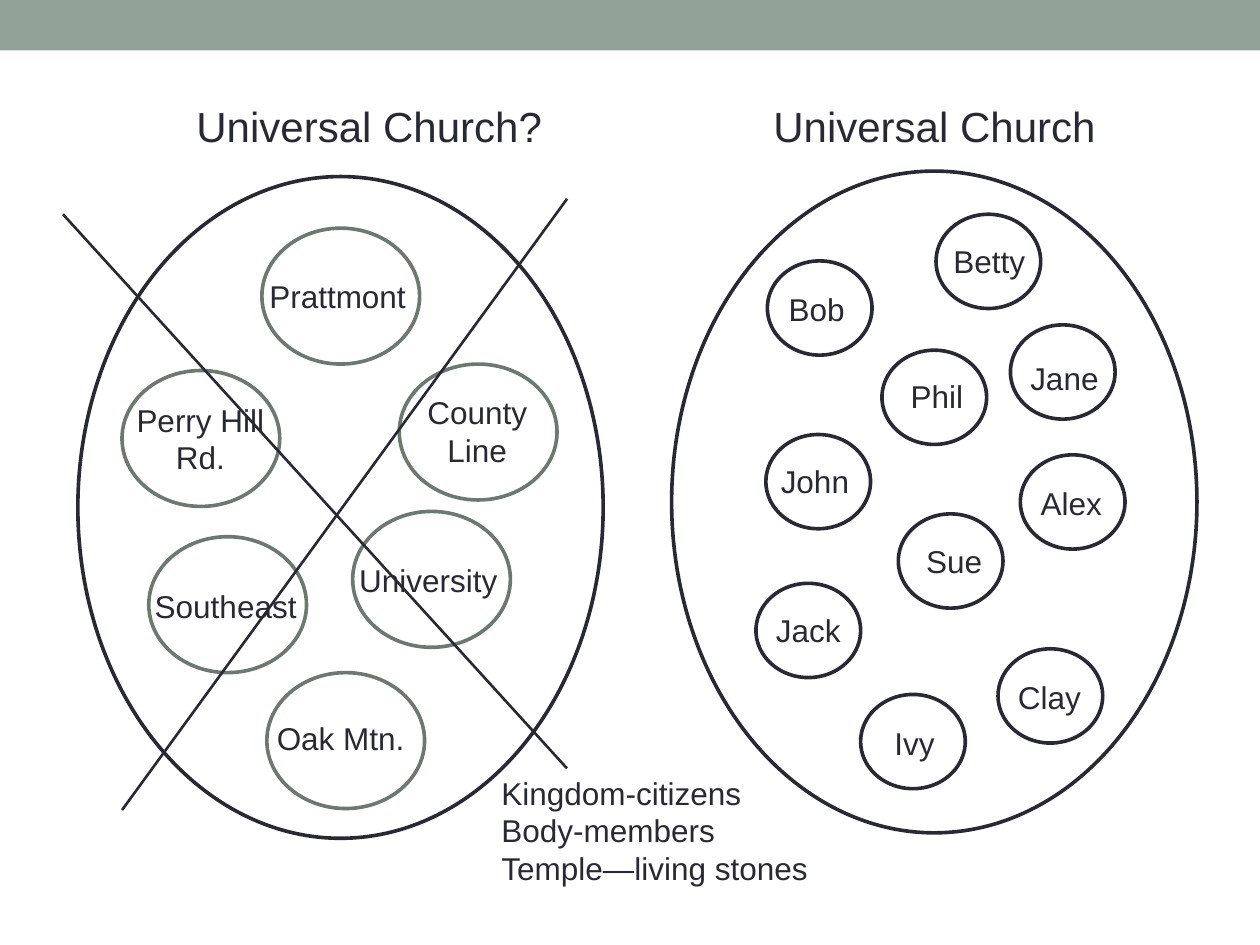
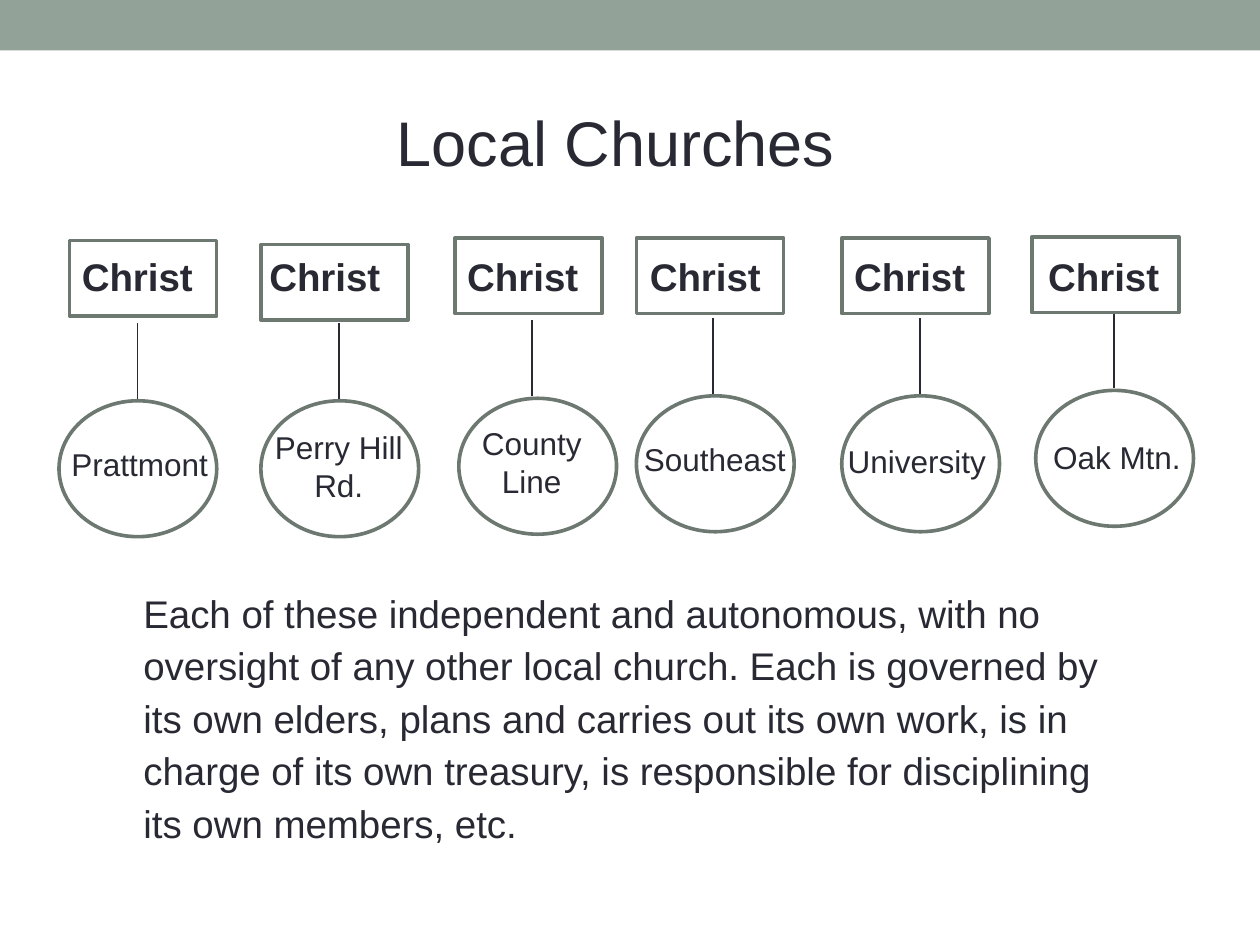
from dataclasses import dataclass

from lxml.etree import SubElement
from pptx import Presentation
from pptx.dml.color import RGBColor
from pptx.enum.shapes import MSO_CONNECTOR as Connector, MSO_SHAPE as Preset
from pptx.enum.text import PP_ALIGN as Align
from pptx.oxml.ns import qn
from pptx.util import Cm, Pt


@dataclass(frozen=True)
class Theme:
    font: str = "Arial"
    ink: str = "292934"
    band: str = "93A299"
    edge: str = "6D7871"
    paper: str = "FFFFFF"
    title: int = 36
    heading: int = 24
    strong: int = 22
    label: int = 18
    outline: float = 2.08
    cross: float = 1.5
    link: float = 1


THEME = Theme()

SLIDE = (25.4, 19.05)
BAND = (0, 0, 25.4, 1.02)
UNIVERSAL = (10.59, 13.34)
CHURCH = (3.18, 2.74)
PERSON = (2.11, 1.9)
HEAD = (2.97, 1.52)
HEADING = (7.52, 1.27)
CHURCH_LABEL_WIDTH = 3.4
LINE_HEIGHT = 1.02
TWO_LINE_HEIGHT = 1.8
HEAD_LABEL_TOP, HEAD_LABEL_HEIGHT = 4.98, 1.19
LINK_LENGTH, LINK_GAP = 1.53, 0.04

HEADINGS = [
    ("Universal Church?", (3.71, 1.9), (1.57, 3.56)),
    ("Universal Church", (15.34, 1.9), (13.54, 3.45)),
]

TWO_LINE_NAMES = {"Perry Hill Rd.", "County Line"}

UNIVERSAL_CHURCHES = [
    ("Prattmont", (5.28, 4.6), (5.18, 5.46)),
    ("Perry Hill Rd.", (2.46, 7.47), (2.34, 7.95)),
    ("County Line", (8.05, 7.34), (7.92, 7.8)),
    ("University", (7.11, 10.31), (6.99, 11.18)),
    ("Southeast", (3, 10.82), (2.87, 11.71)),
    ("Oak Mtn.", (5.38, 13.56), (5.33, 14.38)),
]

PEOPLE = [
    ("Bob", (15.47, 5.26), (15.65, 5.72), 1.7),
    ("Betty", (18.87, 4.32), (18.97, 4.75), 2.18),
    ("Phil", (17.78, 7.06), (18.11, 7.47), 1.7),
    ("Jane", (20.37, 6.55), (20.52, 7.11), 1.9),
    ("John", (15.44, 8.76), (15.49, 9.19), 2.11),
    ("Alex", (20.57, 9.17), (20.73, 9.63), 1.88),
    ("Sue", (18.11, 10.36), (18.42, 10.8), 1.7),
    ("Jack", (15.24, 11.76), (15.39, 12.19), 1.9),
    ("Clay", (20.12, 13.08), (20.27, 13.54), 2.08),
    ("Ivy", (17.35, 14), (17.78, 14.48), 1.7),
]

CROSS = [(1.27, 4.32, 11.43, 15.49), (11.43, 4.01, 2.46, 16.33)]

IMAGES = ["Kingdom-citizens", "Body-members", "Temple—living stones"]

LOCAL_CHURCHES = [
    ("Prattmont", (1.19, 8.08), (1.19, 8.84), (1.4, 4.85), 1.4, 2.77),
    ("Perry Hill Rd.", (5.26, 8.08), (5.13, 8.51), (5.26, 4.93), 5.18, 6.83),
    ("County Line", (9.25, 8.03), (9.02, 8.43), (9.17, 4.8), 9.17, 10.72),
    ("Southeast", (12.83, 7.98), (12.73, 8.74), (12.83, 4.8), 12.85, 14.38),
    ("University", (16.97, 7.98), (16.84, 8.79), (16.97, 4.8), 16.97, 18.54),
    ("Oak Mtn.", (20.88, 7.87), (20.98, 8.71), (20.8, 4.78), 20.88, 22.45),
]

AUTONOMY = (
    "Each of these independent and autonomous, with no oversight of any other "
    "local church. Each is governed by its own elders, plans and carries out "
    "its own work, is in charge of its own treasury, is responsible for "
    "disciplining its own members, etc."
)


def color(value):
    return RGBColor.from_string(value)


def apply(target, values):
    for name, value in values.items():
        setattr(target, name, value)


def add_outline(page, preset, place, size, edge=None, fill=THEME.paper):
    shape = page.shapes.add_shape(preset, *map(Cm, (*place, *size)))
    shape.shadow.inherit = False
    shape.fill.solid()
    shape.fill.fore_color.rgb = color(fill)
    if edge:
        shape.line.color.rgb = color(edge)
        shape.line.width = Pt(THEME.outline)
    else:
        shape.line.fill.background()


def add_text(page, lines, place, size, points, bold=False, **layout):
    box = page.shapes.add_textbox(*map(Cm, (*place, *size)))
    box.text_frame.word_wrap = True
    for index, line in enumerate(lines):
        frame = box.text_frame
        para = frame.add_paragraph() if index else frame.paragraphs[0]
        apply(para, layout)
        span = para.add_run()
        span.text = line
        apply(span.font, {"name": THEME.font, "size": Pt(points), "bold": bold})
        span.font.color.rgb = color(THEME.ink)


def add_line(page, ends, width):
    line = page.shapes.add_connector(Connector.STRAIGHT, *map(Cm, ends))
    line.line.color.rgb = color(THEME.ink)
    line.line.width = Pt(width)
    SubElement(line._element.spPr, qn("a:effectLst"))


def add_church(page, name, circle, label):
    add_outline(page, Preset.OVAL, circle, CHURCH, THEME.edge)
    tall = name in TWO_LINE_NAMES
    size = (CHURCH_LABEL_WIDTH, TWO_LINE_HEIGHT if tall else LINE_HEIGHT)
    align = Align.CENTER if tall else Align.LEFT
    add_text(page, [name], label, size, THEME.label, alignment=align)


def add_page(deck):
    page = deck.slides.add_slide(deck.slide_layouts[6])
    add_outline(page, Preset.RECTANGLE, BAND[:2], BAND[2:], fill=THEME.band)
    return page


def build_universal(deck):
    page = add_page(deck)
    for heading, place, oval in HEADINGS:
        add_outline(page, Preset.OVAL, oval, UNIVERSAL, THEME.ink)
        add_text(page, [heading], place, HEADING, THEME.heading)
    for church in UNIVERSAL_CHURCHES:
        add_church(page, *church)
    for name, circle, label, width in PEOPLE:
        add_outline(page, Preset.OVAL, circle, PERSON, THEME.ink)
        add_text(page, [name], label, (width, LINE_HEIGHT), THEME.label)
    for ends in CROSS:
        add_line(page, ends, THEME.cross)
    add_text(page, IMAGES, (9.86, 15.47), (6.81, 2.57), THEME.label)


def build_local(deck):
    page = add_page(deck)
    add_text(page, ["Local Churches"], (7.75, 1.96), (9.98, 1.8), THEME.title)
    for name, circle, label, head, head_label_left, link in LOCAL_CHURCHES:
        add_church(page, name, circle, label)
        bottom = circle[1] - LINK_GAP
        add_line(page, (link, bottom, link, bottom - LINK_LENGTH), THEME.link)
        add_outline(page, Preset.RECTANGLE, head, HEAD, THEME.edge)
        add_text(page, ["Christ"], (head_label_left, HEAD_LABEL_TOP),
                 (HEAD[0], HEAD_LABEL_HEIGHT), THEME.strong, bold=True)
    add_text(page, [AUTONOMY], (2.64, 11.63), (20.22, 5.61), THEME.strong,
             line_spacing=1.14)


def main():
    deck = Presentation()
    deck.slide_width, deck.slide_height = map(Cm, SLIDE)
    build_universal(deck)
    build_local(deck)
    deck.save("out.pptx")


if __name__ == "__main__":
    main()
